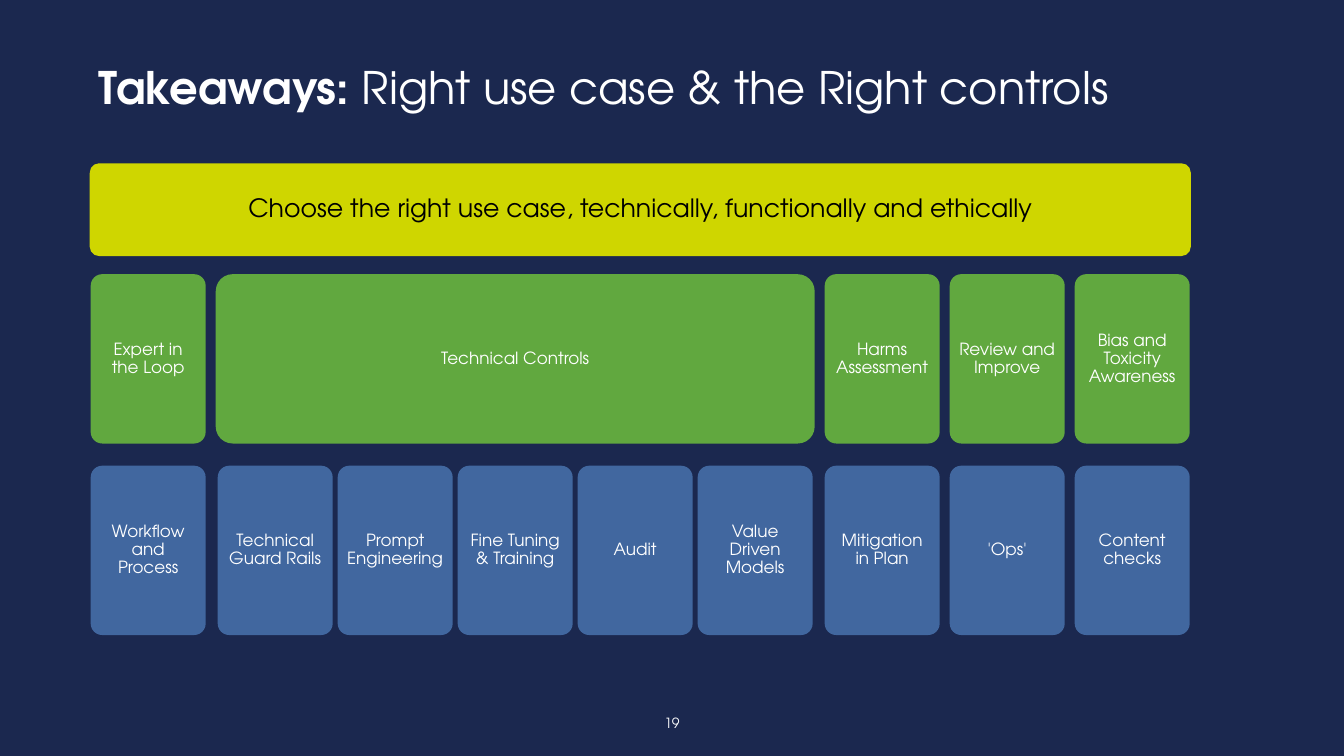
from dataclasses import dataclass

from pptx import Presentation
from pptx import util as u
from pptx.dml.color import RGBColor
from pptx.enum import shapes, text


@dataclass(frozen=True)
class Theme:
    font: str = "TeX Gyre Adventor"
    navy: str = "1B284F"
    lime: str = "CFD600"
    green: str = "61A83F"
    blue: str = "41679F"
    white: str = "FFFFFF"
    black: str = "000000"
    title_size: int = 32
    banner_size: int = 18
    card_size: int = 12
    number_size: int = 10
    line_spacing: float = 0.9


@dataclass(frozen=True)
class Box:
    left: float
    top: float
    width: float
    height: float

    def place(self):
        return [u.Inches(v) for v in (self.left, self.top, self.width, self.height)]


THEME = Theme()
SLIDE_WIDTH, SLIDE_HEIGHT = 13.33, 7.5

# Grid of the control columns, in inches
CARD_WIDTH, CARD_HEIGHT = 1.14, 1.68
COLUMN_GAP, INNER_GAP = 0.1, 0.05
GROUP_WIDTH = 5.94
ROW_PITCH = 1.9

# Each control with the practices below it
CONTROLS = [
    ("Expert in the Loop", ["Workflow and Process"]),
    ("Technical Controls", ["Technical Guard Rails", "Prompt Engineering",
                            "Fine Tuning & Training", "Audit", "Value Driven Models"]),
    ("Harms Assessment", ["Mitigation in Plan"]),
    ("Review and Improve", ["'Ops'"]),
    ("Bias and Toxicity Awareness", ["Content checks"]),
]


def format_run(run, size, color, bold=False):
    run.font.name = THEME.font
    run.font.size = u.Pt(size)
    run.font.bold = bold
    run.font.color.rgb = RGBColor.from_string(color)


def centre_text(shape, words, size, color, inset):
    frame = shape.text_frame
    frame.text = words
    frame.word_wrap = True
    frame.vertical_anchor = text.MSO_ANCHOR.MIDDLE
    frame.margin_left = frame.margin_right = u.Inches(inset)
    frame.margin_top = frame.margin_bottom = u.Inches(inset)
    paragraph = frame.paragraphs[0]
    paragraph.alignment = text.PP_ALIGN.CENTER
    paragraph.line_spacing = THEME.line_spacing
    format_run(paragraph.runs[0], size, color)


def add_card(slide, box, words, fill, size=THEME.card_size, color=THEME.white, inset=0.05):
    card = slide.shapes.add_shape(shapes.MSO_SHAPE.ROUNDED_RECTANGLE, *box.place())
    card.adjustments[0] = 0.1
    card.shadow.inherit = False
    card.fill.solid()
    card.fill.fore_color.rgb = RGBColor.from_string(fill)
    card.line.fill.background()
    centre_text(card, words, size, color, inset)


def add_title(slide, box, lead, rest):
    title = slide.shapes.title
    title.left, title.top, title.width, title.height = box.place()
    frame = title.text_frame
    frame.word_wrap = True
    frame.auto_size = text.MSO_AUTO_SIZE.NONE
    frame.vertical_anchor = text.MSO_ANCHOR.TOP
    paragraph = frame.paragraphs[0]
    paragraph.alignment = text.PP_ALIGN.LEFT
    paragraph.line_spacing = THEME.line_spacing
    for words, bold in ((lead, True), (rest, False)):
        run = paragraph.add_run()
        run.text = words
        format_run(run, THEME.title_size, THEME.white, bold)


def add_controls(slide, left, top):
    for control, practices in CONTROLS:
        count = len(practices)
        width = GROUP_WIDTH if count > 1 else CARD_WIDTH
        add_card(slide, Box(left, top, width, CARD_HEIGHT), control, THEME.green)

        # Practices are centred under their control
        pitch = CARD_WIDTH + INNER_GAP
        first = left + (width - count * pitch + INNER_GAP) / 2
        for index, practice in enumerate(practices):
            box = Box(first + index * pitch, top + ROW_PITCH, CARD_WIDTH, CARD_HEIGHT)
            add_card(slide, box, practice, THEME.blue)
        left += width + COLUMN_GAP


def add_page_number(slide, box, number):
    page_number = slide.shapes.add_textbox(*box.place())
    centre_text(page_number, number, THEME.number_size, THEME.white, 0.05)


def build_takeaways(presentation):
    slide = presentation.slides.add_slide(presentation.slide_layouts[5])
    slide.background.fill.solid()
    slide.background.fill.fore_color.rgb = RGBColor.from_string(THEME.navy)

    add_title(slide, Box(0.88, 0.6, 12.45, 0.7),
              "Takeaways: ", "Right use case & the Right controls")
    add_card(slide, Box(0.89, 1.62, 10.92, 0.92),
             "Choose the right use case, technically, functionally and ethically",
             THEME.lime, THEME.banner_size, THEME.black, 0.07)
    add_controls(slide, 0.9, 2.72)
    add_page_number(slide, Box((SLIDE_WIDTH - 0.51) / 2, 6.98, 0.51, 0.4), "19")


def main():
    presentation = Presentation()
    presentation.slide_width = u.Inches(SLIDE_WIDTH)
    presentation.slide_height = u.Inches(SLIDE_HEIGHT)
    build_takeaways(presentation)
    presentation.save("out.pptx")


if __name__ == "__main__":
    main()
